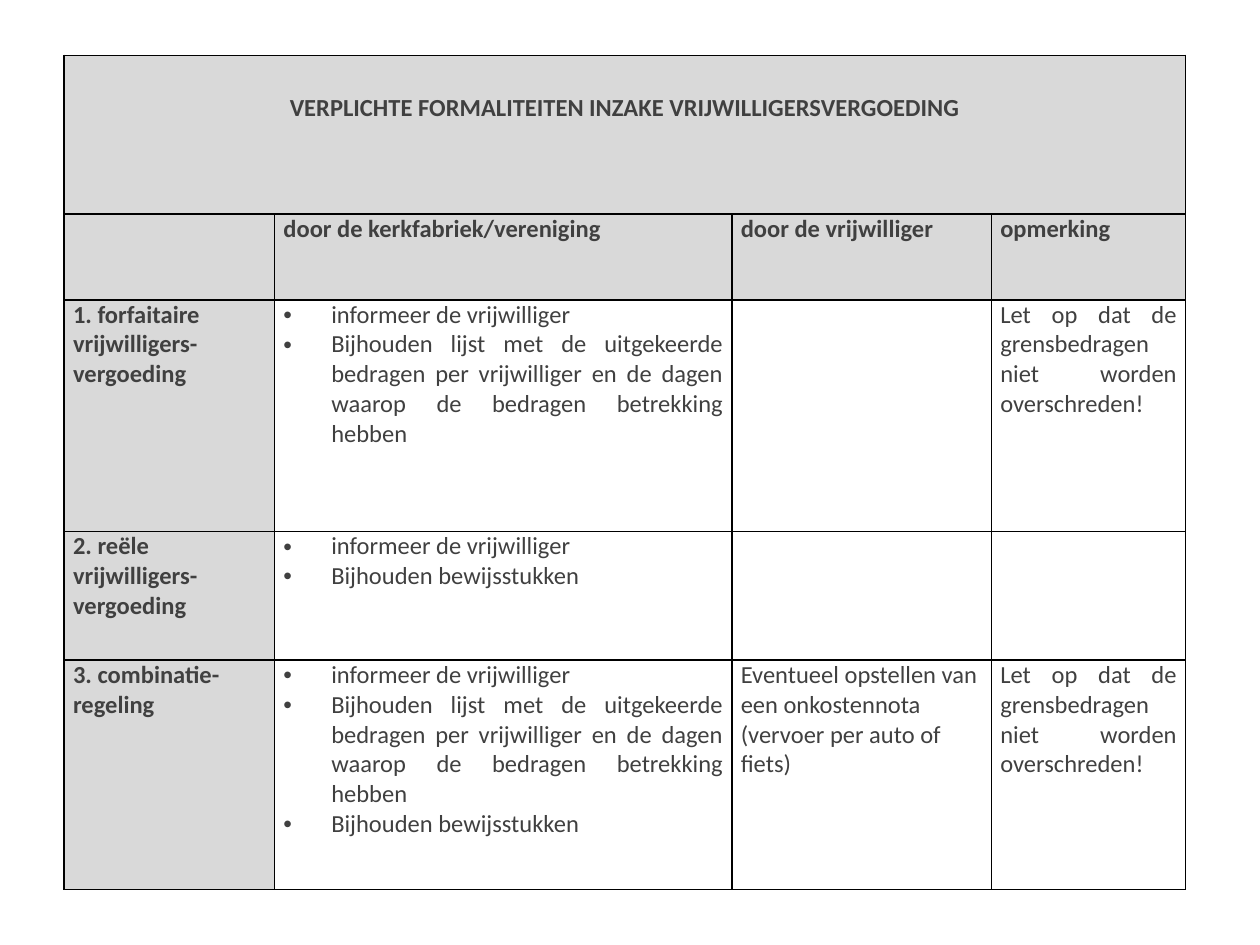
from lxml.etree import SubElement
from pptx import Presentation
from pptx.dml.color import RGBColor as RGB
from pptx.enum.text import PP_ALIGN as Align
from pptx.oxml.ns import qn
from pptx.util import Inches, Pt

COLORS = {"text": "404040", "header": "D9D9D9", "border": "000000"}
COLUMN_WIDTHS = [1.67, 3.63, 2.06, 1.54]
ROW_HEIGHTS = [1.26, 0.68, 1.84, 1.02, 1.82]

TITLE = "VERPLICHTE FORMALITEITEN INZAKE VRIJWILLIGERSVERGOEDING"
INFORM = "informeer de vrijwilliger"
KEEP_LIST = (
    "Bijhouden lijst met de uitgekeerde bedragen per vrijwilliger "
    "en de dagen waarop de bedragen betrekking hebben"
)
KEEP_PROOF = "Bijhouden bewijsstukken"
EXPENSE_NOTE = "Eventueel opstellen van een onkostennota (vervoer per auto of fiets)"
LIMIT_WARNING = "Let op dat de grensbedragen niet worden overschreden!"

HEADINGS = ["", "door de kerkfabriek/vereniging", "door de vrijwilliger", "opmerking"]
SCHEMES = [
    ("1. forfaitaire vrijwilligers-vergoeding", [INFORM, KEEP_LIST], "", LIMIT_WARNING),
    ("2. reële vrijwilligers-vergoeding", [INFORM, KEEP_PROOF], "", ""),
    ("3. combinatie-regeling", [INFORM, KEEP_LIST, KEEP_PROOF], EXPENSE_NOTE, LIMIT_WARNING),
]


class FormalitiesSlide:
    """Holds the style and the slide, and draws its elements."""

    def __init__(self, slide, font="Calibri", size=14):
        self.slide = slide
        self.font = font
        self.size = size

    def table(self, left, top, widths, heights):
        grid = self.slide.shapes.add_table(
            len(heights), len(widths), Inches(left), Inches(top),
            Inches(sum(widths)), Inches(sum(heights)),
        ).table
        for column, width in zip(grid.columns, widths):
            column.width = Inches(width)
        for row, height in zip(grid.rows, heights):
            row.height = Inches(height)
        return grid

    def borders(self, cell):
        properties = cell._tc.get_or_add_tcPr()
        for side in ("lnL", "lnR", "lnT", "lnB"):
            line = SubElement(properties, qn(f"a:{side}"), w=str(Pt(1)))
            fill = SubElement(line, qn("a:solidFill"))
            SubElement(fill, qn("a:srgbClr"), val=COLORS["border"])

    def bullet(self, paragraph):
        properties = paragraph._p.get_or_add_pPr()
        properties.set("marL", str(Inches(0.38)))
        properties.set("indent", str(-Inches(0.38)))
        SubElement(properties, qn("a:buFont"), typeface="Arial")
        SubElement(properties, qn("a:buChar"), char="•")

    def cell(self, cell, content, align=Align.LEFT, header=False, top=0):
        self.borders(cell)
        if header:
            cell.fill.solid()
            cell.fill.fore_color.rgb = RGB.from_string(COLORS["header"])
        else:
            cell.fill.background()
        cell.margin_left = cell.margin_right = Inches(0.07)
        cell.margin_top, cell.margin_bottom = Inches(top), 0
        bulleted = isinstance(content, list)
        lines = content if bulleted else [content]
        cell.text = "\n".join(lines)
        for paragraph in cell.text_frame.paragraphs:
            paragraph.alignment = align
            font = paragraph.font
            font.name, font.size, font.bold = self.font, Pt(self.size), header
            font.color.rgb = RGB.from_string(COLORS["text"])
            if bulleted:
                self.bullet(paragraph)


def main():
    presentation = Presentation()
    presentation.slide_width, presentation.slide_height = Inches(10), Inches(7.5)
    page = FormalitiesSlide(presentation.slides.add_slide(presentation.slide_layouts[6]))
    grid = page.table(0.51, 0.44, COLUMN_WIDTHS, ROW_HEIGHTS)

    last = len(COLUMN_WIDTHS) - 1
    grid.cell(0, 0).merge(grid.cell(0, last))
    for column in range(1, last + 1):
        page.borders(grid.cell(0, column))
    page.cell(grid.cell(0, 0), TITLE, Align.CENTER, header=True, top=0.3)

    alignments = [Align.LEFT, Align.JUSTIFY, Align.LEFT, Align.JUSTIFY]
    for row, contents in enumerate([HEADINGS, *SCHEMES], start=1):
        for column, (content, align) in enumerate(zip(contents, alignments)):
            page.cell(grid.cell(row, column), content, align, header=row == 1 or column == 0)

    presentation.save("out.pptx")


if __name__ == "__main__":
    main()
